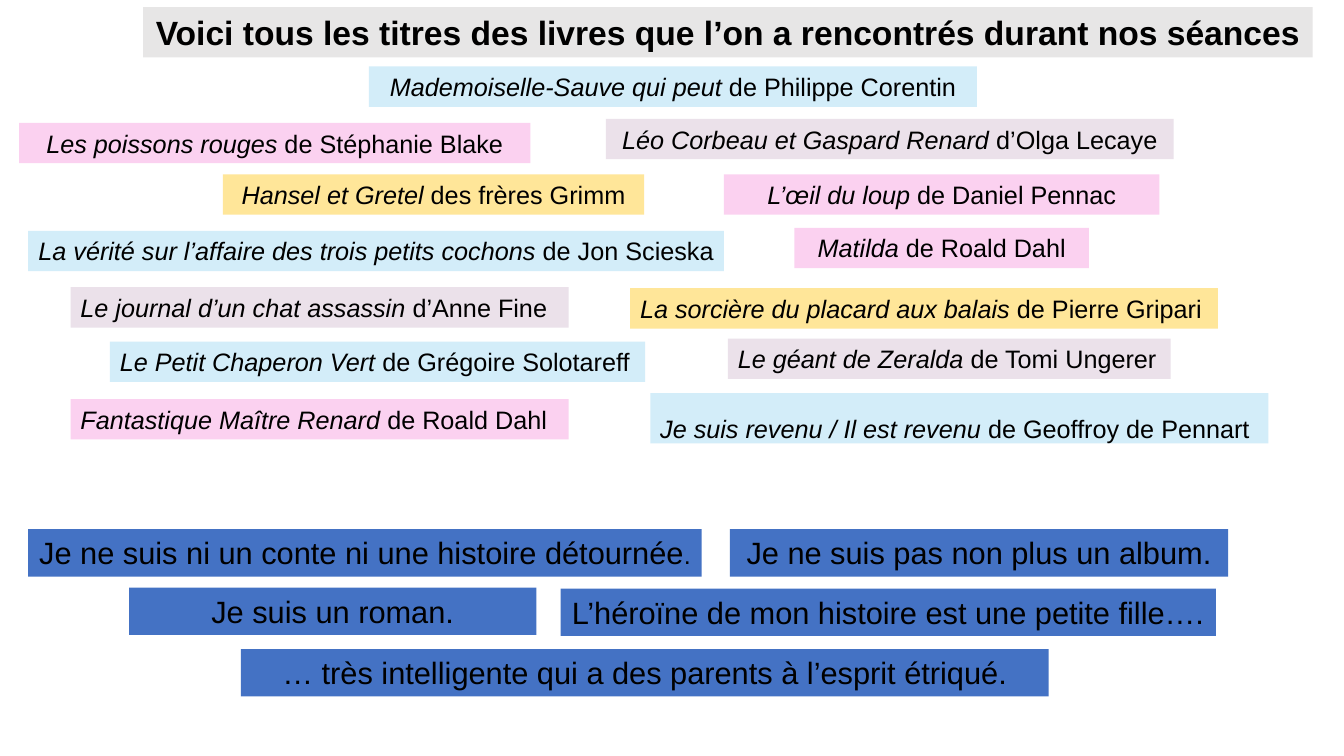
from dataclasses import dataclass

from pptx import Presentation
from pptx.dml.color import RGBColor
from pptx.enum.text import MSO_AUTO_SIZE, PP_ALIGN
from pptx.util import Inches, Pt

CENTER, LEFT = PP_ALIGN.CENTER, PP_ALIGN.LEFT
GROW = MSO_AUTO_SIZE.SHAPE_TO_FIT_TEXT


@dataclass(frozen=True)
class Theme:
    font: str = "Arial"
    text: str = "000000"
    grey: str = "E7E6E6"
    sky: str = "D3EDF9"
    mauve: str = "EBE1EA"
    pink: str = "FBD1F0"
    yellow: str = "FFE699"
    blue: str = "4472C4"
    title_size: int = 24
    book_size: int = 18
    clue_size: int = 22


T = Theme()

# left, top, width, colour, title, author
CENTERED_BOOKS = [
    (3.66, 0.66, 6.03, T.sky, "Mademoiselle-Sauve qui peut", " de Philippe Corentin"),
    (6.01, 1.18, 5.63, T.mauve, "Léo Corbeau et Gaspard Renard", " d’Olga Lecaye"),
    (0.19, 1.22, 5.07, T.pink, "Les poissons rouges", " de Stéphanie Blake"),
    (7.18, 1.73, 4.32, T.pink, "L’œil du loup", " de Daniel Pennac"),
    (2.21, 1.73, 4.18, T.yellow, "Hansel et Gretel", " des frères Grimm"),
    (7.88, 2.26, 2.92, T.pink, "Matilda", " de Roald Dahl"),
    (0.28, 2.29, 6.9, T.sky, "La vérité sur l’affaire des trois petits cochons",
     " de Jon Scieska"),
]
LEFT_BOOKS = [
    (6.25, 2.86, 5.83, T.yellow, "La sorcière du placard aux balais", " de Pierre Gripari"),
    (0.7, 2.85, 4.94, T.mauve, "Le journal d’un chat assassin", " d’Anne Fine"),
    (1.09, 3.39, 5.31, T.sky, "Le Petit Chaperon Vert", " de Grégoire Solotareff"),
    (7.22, 3.36, 4.39, T.mauve, "Le géant de Zeralda", " de Tomi Ungerer"),
    (0.7, 3.96, 4.94, T.pink, "Fantastique Maître Renard", " de Roald Dahl"),
]
SPACED_BOOK = (6.45, 3.9, 6.13, T.sky, "Je suis revenu / Il est revenu",
               " de Geoffroy de Pennart")

# left, top, width, text runs
CLUES = [
    (2.39, 6.44, 8.01, ["… très intelligente qui a des parents à l’esprit étriqué."]),
    (7.24, 5.25, 4.94, ["Je ne suis pas non plus un album."]),
    (1.28, 5.83, 4.04, ["Je suis un roman."]),
    (5.56, 5.84, 6.5, ["L’héroïne de mon histoire est une petite fille…."]),
    (0.28, 5.25, 6.68, ["Je ne suis ni un conte ni une histoire détournée", "."]),
]


def add_label(s, box, color, texts, size, align=CENTER, wrap=True):
    """Add a filled text box and return its paragraph, one run per text."""
    sp = s.shapes.add_textbox(*map(Inches, box))
    sp.fill.solid()
    sp.fill.fore_color.rgb = RGBColor.from_string(color)
    tf = sp.text_frame
    tf.word_wrap = wrap
    tf.auto_size = GROW
    p = tf.paragraphs[0]
    p.alignment = align
    p.font.name = T.font
    p.font.size = Pt(size)
    p.font.color.rgb = RGBColor.from_string(T.text)
    for text in texts:
        p.add_run().text = text
    return p


def add_title(s, box):
    text = "Voici tous les titres des livres que l’on a rencontrés durant nos séances"
    add_label(s, box, T.grey, [text], T.title_size).font.bold = True


def add_book(s, book, align=CENTER, wrap=True, height=0.4):
    left, top, width, color, title, author = book
    p = add_label(s, (left, top, width, height), color, [title, author],
                  T.book_size, align, wrap)
    p.runs[0].font.italic = True
    return p


def add_books(s):
    for book in CENTERED_BOOKS:
        add_book(s, book)
    for book in LEFT_BOOKS:
        add_book(s, book, LEFT, wrap=False)
    add_book(s, SPACED_BOOK, LEFT, height=0.5).line_spacing = 1.5


def add_clues(s):
    for left, top, width, texts in CLUES:
        p = add_label(s, (left, top, width, 0.47), T.blue, texts, T.clue_size)
        for full_stop in p.runs[1:]:
            full_stop.font.size = Pt(T.book_size)


def main():
    prs = Presentation()
    prs.slide_width, prs.slide_height = Inches(13.33), Inches(7.5)
    s = prs.slides.add_slide(prs.slide_layouts[6])
    add_title(s, (1.42, 0.07, 11.6, 0.5))
    add_books(s)
    add_clues(s)
    prs.save("out.pptx")


if __name__ == "__main__":
    main()
